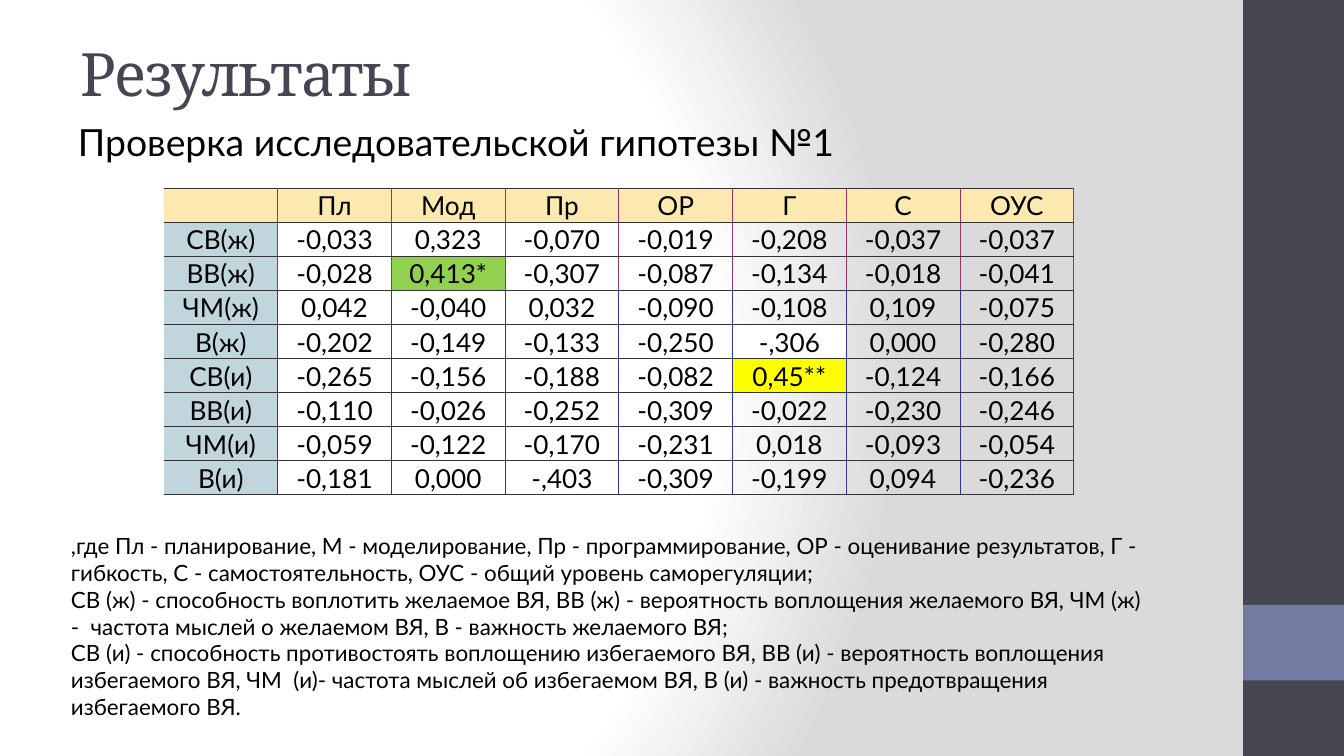
from lxml.etree import SubElement as Sub
from pptx import Presentation
from pptx.dml.color import RGBColor as Rgb
from pptx.enum.shapes import MSO_SHAPE
from pptx.enum.text import MSO_ANCHOR as Anchor, MSO_AUTO_SIZE as Auto, PP_ALIGN as Align
from pptx.oxml.ns import qn
from pptx.util import Inches, Pt

DARK = Rgb(0x46, 0x46, 0x53)
SLATE = Rgb(0x72, 0x7C, 0xA3)
BLACK = Rgb(0, 0, 0)
WHITE = Rgb(0xFF, 0xFF, 0xFF)
GREY = Rgb(0xDA, 0xDA, 0xDA)
CREAM = Rgb(0xFC, 0xE9, 0xAF)
BLUE = Rgb(0xC0, 0xD6, 0xDC)
GREEN = Rgb(0x92, 0xD0, 0x50)
YELLOW = Rgb(0xFF, 0xFF, 0)
NAVY = Rgb(0x33, 0x33, 0x99)
PLUM = Rgb(0x99, 0x33, 0x66)
COAL = Rgb(0x33, 0x33, 0x33)

HEAD = ["", "Пл", "Мод", "Пр", "ОР", "Г", "С", "ОУС"]
DATA = [
    ["СВ(ж)", "-0,033", "0,323", "-0,070", "-0,019", "-0,208", "-0,037", "-0,037"],
    ["ВВ(ж)", "-0,028", "0,413*", "-0,307", "-0,087", "-0,134", "-0,018", "-0,041"],
    ["ЧМ(ж)", "0,042", "-0,040", "0,032", "-0,090", "-0,108", "0,109", "-0,075"],
    ["В(ж)", "-0,202", "-0,149", "-0,133", "-0,250", "-,306", "0,000", "-0,280"],
    ["СВ(и)", "-0,265", "-0,156", "-0,188", "-0,082", "0,45**", "-0,124", "-0,166"],
    ["ВВ(и)", "-0,110", "-0,026", "-0,252", "-0,309", "-0,022", "-0,230", "-0,246"],
    ["ЧМ(и)", "-0,059", "-0,122", "-0,170", "-0,231", "0,018", "-0,093", "-0,054"],
    ["В(и)", "-0,181", "0,000", "-,403", "-0,309", "-0,199", "0,094", "-0,236"],
]
MARKS = {(2, 2): GREEN, (5, 5): YELLOW, (4, 5): WHITE, (8, 3): WHITE}
NOTES = [
    ",где Пл - планирование, М - моделирование, Пр - программирование, ОР - оценивание результатов, Г - гибкость, С - самостоятельность, ОУС - общий уровень саморегуляции;",
    "СВ (ж) - способность воплотить желаемое ВЯ, ВВ (ж) - вероятность воплощения желаемого ВЯ, ЧМ (ж) -  частота мыслей о желаемом ВЯ, В - важность желаемого ВЯ;",
    "СВ (и) - способность противостоять воплощению избегаемого ВЯ, ВВ (и) - вероятность воплощения избегаемого ВЯ, ЧМ  (и)- частота мыслей об избегаемом ВЯ, В (и) - важность предотвращения избегаемого ВЯ.",
]


def style(para, size, face="Lato", color=BLACK):
    para.font.size = Pt(size)
    para.font.name = face
    para.font.color.rgb = color


def edge(cell, side, color):
    line = Sub(cell._tc.get_or_add_tcPr(), qn("a:ln" + side), w=str(Pt(0.5)))
    if color is None:
        Sub(line, qn("a:noFill"))
    else:
        Sub(Sub(line, qn("a:solidFill")), qn("a:srgbClr"), val=str(color))


deck = Presentation()
deck.slide_width = wide = Inches(10)
deck.slide_height = high = wide * 9 // 16
slide = deck.slides.add_slide(deck.slide_layouts[5])

slide.background.fill.gradient()
grad = slide.element.find(".//" + qn("a:gradFill"))
for child in list(grad):
    grad.remove(child)
stops = Sub(grad, qn("a:gsLst"))
for share, color in [(0, WHITE), (75, WHITE), (100, GREY)]:
    stop = Sub(stops, qn("a:gs"), pos=str(share * 1000))
    Sub(stop, qn("a:srgbClr"), val=str(color))
ring = Sub(grad, qn("a:path"), attrib={"path": "circle"})
Sub(ring, qn("a:fillToRect"), l="20000", t="50000", r="100000", b="50000")

side = wide * 37 // 40
for top, tall, color in [(0, 10, DARK), (8, 1, SLATE)]:
    bar = slide.shapes.add_shape(
        MSO_SHAPE.RECTANGLE, side, high * top // 10, wide - side, high * tall // 10)
    bar.shadow.inherit = False
    bar.fill.solid()
    bar.fill.fore_color.rgb = color
    bar.line.fill.background()

title = slide.shapes.title
title.left, title.top = Inches(0.5), Inches(0.23)
title.width, title.height = Inches(8.33), Inches(0.62)
frame = title.text_frame
frame.text = "Результаты"
frame.auto_size = Auto.NONE
frame.vertical_anchor = Anchor.MIDDLE
para = frame.paragraphs[0]
para.alignment = Align.LEFT
style(para, 32, "Cambria", DARK)
para.runs[0].font._element.set("spc", "-100")

lead = slide.shapes.add_textbox(Inches(0.35), Inches(0.84), Inches(8.33), Inches(0.47))
frame = lead.text_frame
frame.word_wrap = True
frame.margin_left = Inches(0.23)
frame.text = "Проверка исследовательской гипотезы №1"
style(frame.paragraphs[0], 20)

rows = [HEAD] + DATA
col, row = Inches(6.77) // len(HEAD), Inches(2.28) // len(rows)
grid = slide.shapes.add_table(
    len(rows), len(HEAD), Inches(1.22), Inches(1.4), col * len(HEAD), row * len(rows)).table
grid.first_row = grid.horz_banding = False
for i, texts in enumerate(rows):
    grid.rows[i].height = row
    wall = PLUM if i < 3 else NAVY
    for j, text in enumerate(texts):
        cell = grid.cell(i, j)
        cell.vertical_anchor = Anchor.MIDDLE
        cell.margin_left = cell.margin_right = cell.margin_top = Inches(0.01)
        cell.margin_bottom = 0
        para = cell.text_frame.paragraphs[0]
        para.alignment = Align.CENTER
        style(para, 14)
        if text:
            para.add_run().text = text
        edge(cell, "L", wall if j else None)
        edge(cell, "R", wall)
        edge(cell, "T", COAL)
        edge(cell, "B", COAL)
        color = MARKS.get((i, j), CREAM if i == 0 else BLUE if j == 0 else None)
        if color is None:
            cell.fill.background()
        else:
            cell.fill.solid()
            cell.fill.fore_color.rgb = color

notes = slide.shapes.add_textbox(Inches(0.43), Inches(3.91), Inches(8.27), Inches(1.31))
frame = notes.text_frame
frame.word_wrap = True
frame.auto_size = Auto.SHAPE_TO_FIT_TEXT
frame.text = "\n".join(NOTES)
for para in frame.paragraphs:
    style(para, 12)

deck.save("out.pptx")
